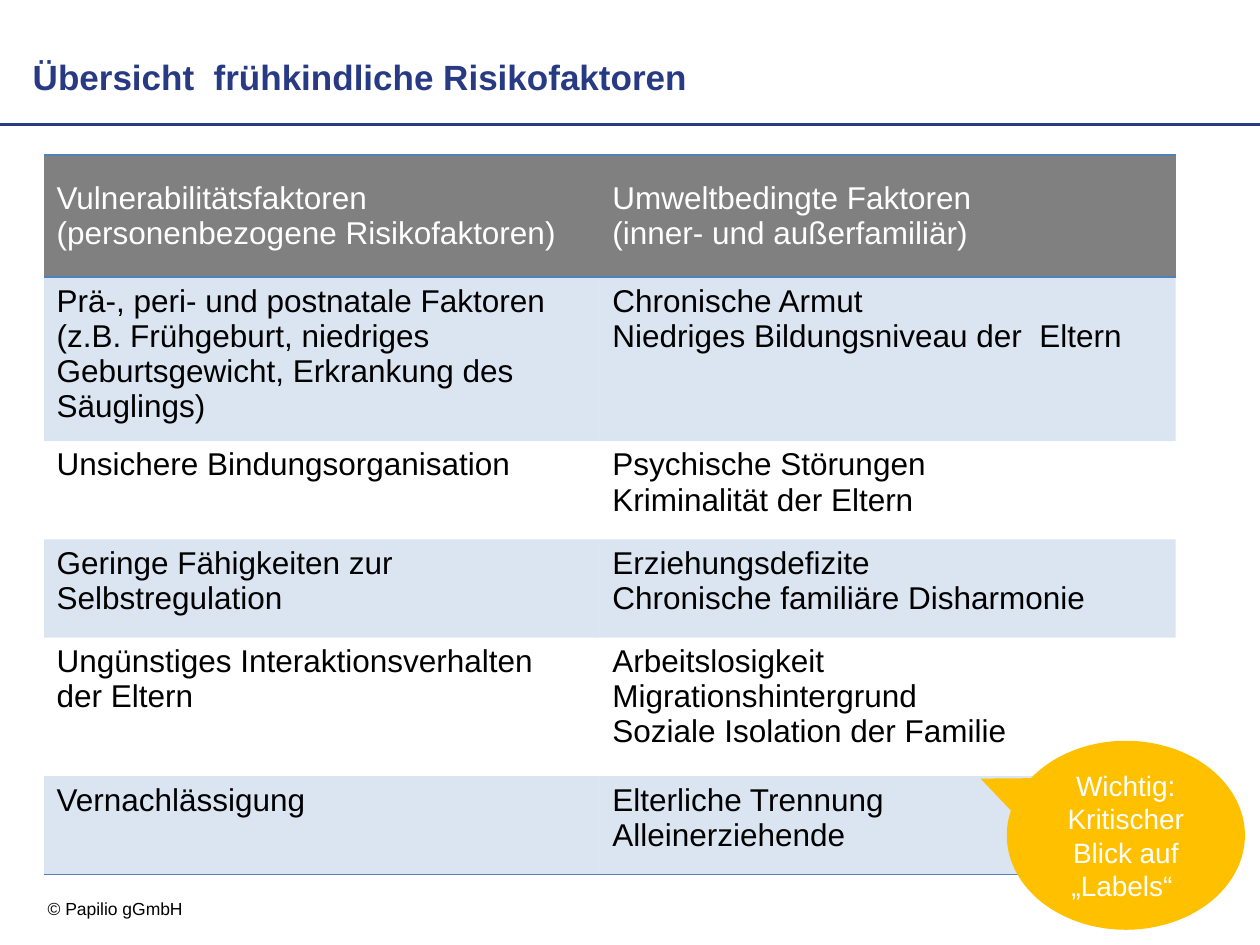
from typing import NamedTuple

from lxml.etree import SubElement
from pptx import Presentation
from pptx.dml.color import RGBColor
from pptx.enum.shapes import MSO_CONNECTOR, MSO_SHAPE
from pptx.enum.text import MSO_ANCHOR, MSO_AUTO_SIZE, PP_ALIGN
from pptx.oxml import parse_xml
from pptx.oxml.ns import nsdecls, qn
from pptx.util import Inches, Pt

COLORS = {
    "navy": "283A84",
    "blue": "4F81BD",
    "gray": "808080",
    "amber": "FFC000",
    "white": "FFFFFF",
    "black": "000000",
}
NO_TABLE_STYLE = "{2D5ABB26-0587-4C30-8999-92F81FD0307C}"


class FactorRow(NamedTuple):
    height: float
    personal: str
    environmental: str


# "\v" is a line break, "\n" starts a new paragraph.
ROWS = [
    FactorRow(0.97, "Vulnerabilitätsfaktoren \v(personenbezogene Risikofaktoren)",
              "Umweltbedingte Faktoren \v(inner- und außerfamiliär)"),
    FactorRow(1.24, "Prä-, peri- und postnatale Faktoren (z.B. Frühgeburt, niedriges "
                    "Geburtsgewicht, Erkrankung des Säuglings)",
              "Chronische Armut\nNiedriges Bildungsniveau der  Eltern"),
    FactorRow(0.78, "Unsichere Bindungsorganisation",
              "Psychische Störungen\vKriminalität der Eltern"),
    FactorRow(0.78, "Geringe Fähigkeiten zur Selbstregulation",
              "Erziehungsdefizite\vChronische familiäre Disharmonie"),
    FactorRow(1.1, "Ungünstiges Interaktionsverhalten\nder Eltern",
              "Arbeitslosigkeit\nMigrationshintergrund\nSoziale Isolation der Familie"),
    FactorRow(0.78, "Vernachlässigung", "Elterliche Trennung\nAlleinerziehende"),
]
COLUMN_WIDTHS = (4.41, 4.57)


def color(name: str) -> RGBColor:
    return RGBColor.from_string(COLORS[name])


def write(frame, text: str, size: int, color_name: str, bold: bool = False,
          align: PP_ALIGN = PP_ALIGN.LEFT) -> None:
    frame.text = text
    for paragraph in frame.paragraphs:
        paragraph.alignment = align
        font = paragraph.font
        font.name, font.size, font.bold = "Arial", Pt(size), bold
        font.color.rgb = color(color_name)


def add_borders(cell, sides: str) -> None:
    """Draw 1 pt lines on the given sides, in schema order (T before B)."""
    properties = cell._tc.get_or_add_tcPr()
    for index, side in enumerate(sides):
        properties.insert(index, parse_xml(
            f'<a:ln{side} {nsdecls("a")} w="{Pt(1)}"><a:solidFill>'
            f'<a:srgbClr val="{COLORS["blue"]}"/></a:solidFill></a:ln{side}>'))


def fill_cell(cell, row_index: int) -> None:
    """Gray header, then alternating pale blue and clear bands."""
    if row_index > 0 and row_index % 2 == 0:
        cell.fill.background()
        return
    cell.fill.solid()
    cell.fill.fore_color.rgb = color("blue" if row_index else "gray")
    if row_index:
        rgb = cell._tc.tcPr.find(".//" + qn("a:srgbClr"))
        SubElement(rgb, qn("a:alpha"), val="20000")


def add_title(slide) -> None:
    title = slide.shapes.title
    title.left, title.top = Inches(0.16), Inches(0.39)
    title.width, title.height = Inches(7.56), Inches(0.4)
    frame = title.text_frame
    frame.auto_size = MSO_AUTO_SIZE.NONE
    frame.vertical_anchor = MSO_ANCHOR.TOP
    write(frame, "Übersicht  frühkindliche Risikofaktoren", 20, "navy", bold=True)

    rule = slide.shapes.add_connector(
        MSO_CONNECTOR.STRAIGHT, Inches(0), Inches(0.99), Inches(10), Inches(0.99))
    rule.line.color.rgb = color("navy")
    rule.line.width = Pt(2)
    SubElement(rule._element.spPr, qn("a:effectLst"))


def add_copyright(slide) -> None:
    box = slide.shapes.add_textbox(Inches(0.28), Inches(7.08), Inches(2.17), Inches(0.27))
    box.text_frame.word_wrap = True
    write(box.text_frame, "© Papilio gGmbH", 10, "black")


def add_factor_table(slide) -> None:
    table = slide.shapes.add_table(
        len(ROWS), len(COLUMN_WIDTHS), Inches(0.35), Inches(1.23),
        Inches(sum(COLUMN_WIDTHS)), Inches(sum(row.height for row in ROWS))).table
    table._tbl.tblPr.find(qn("a:tableStyleId")).text = NO_TABLE_STYLE
    for column, width in zip(table.columns, COLUMN_WIDTHS):
        column.width = Inches(width)

    for row_index, row in enumerate(ROWS):
        table.rows[row_index].height = Inches(row.height)
        is_header = row_index == 0
        is_last = row_index == len(ROWS) - 1
        for column_index, text in enumerate((row.personal, row.environmental)):
            cell = table.cell(row_index, column_index)
            write(cell.text_frame, text, 18, "white" if is_header else "black")
            cell.vertical_anchor = MSO_ANCHOR.MIDDLE if is_header else MSO_ANCHOR.TOP
            fill_cell(cell, row_index)
            add_borders(cell, "TB" if is_header else "B" if is_last else "")


def add_callout(slide) -> None:
    callout = slide.shapes.add_shape(
        MSO_SHAPE.OVAL_CALLOUT, Inches(7.99), Inches(5.88), Inches(1.89), Inches(1.5))
    callout.adjustments[0], callout.adjustments[1] = -0.61, -0.3
    callout.shadow.inherit = False
    callout.fill.solid()
    callout.fill.fore_color.rgb = color("amber")
    callout.line.fill.background()
    frame = callout.text_frame
    frame.word_wrap = True
    frame.vertical_anchor = MSO_ANCHOR.MIDDLE
    write(frame, "Wichtig: Kritischer Blick auf „Labels“ ", 16, "white",
          align=PP_ALIGN.CENTER)


def main() -> None:
    presentation = Presentation()
    presentation.slide_width, presentation.slide_height = Inches(10), Inches(7.5)
    title_only = presentation.slide_layouts[5]
    slide = presentation.slides.add_slide(title_only)
    add_title(slide)
    add_copyright(slide)
    add_factor_table(slide)
    add_callout(slide)
    presentation.save("out.pptx")


if __name__ == "__main__":
    main()
